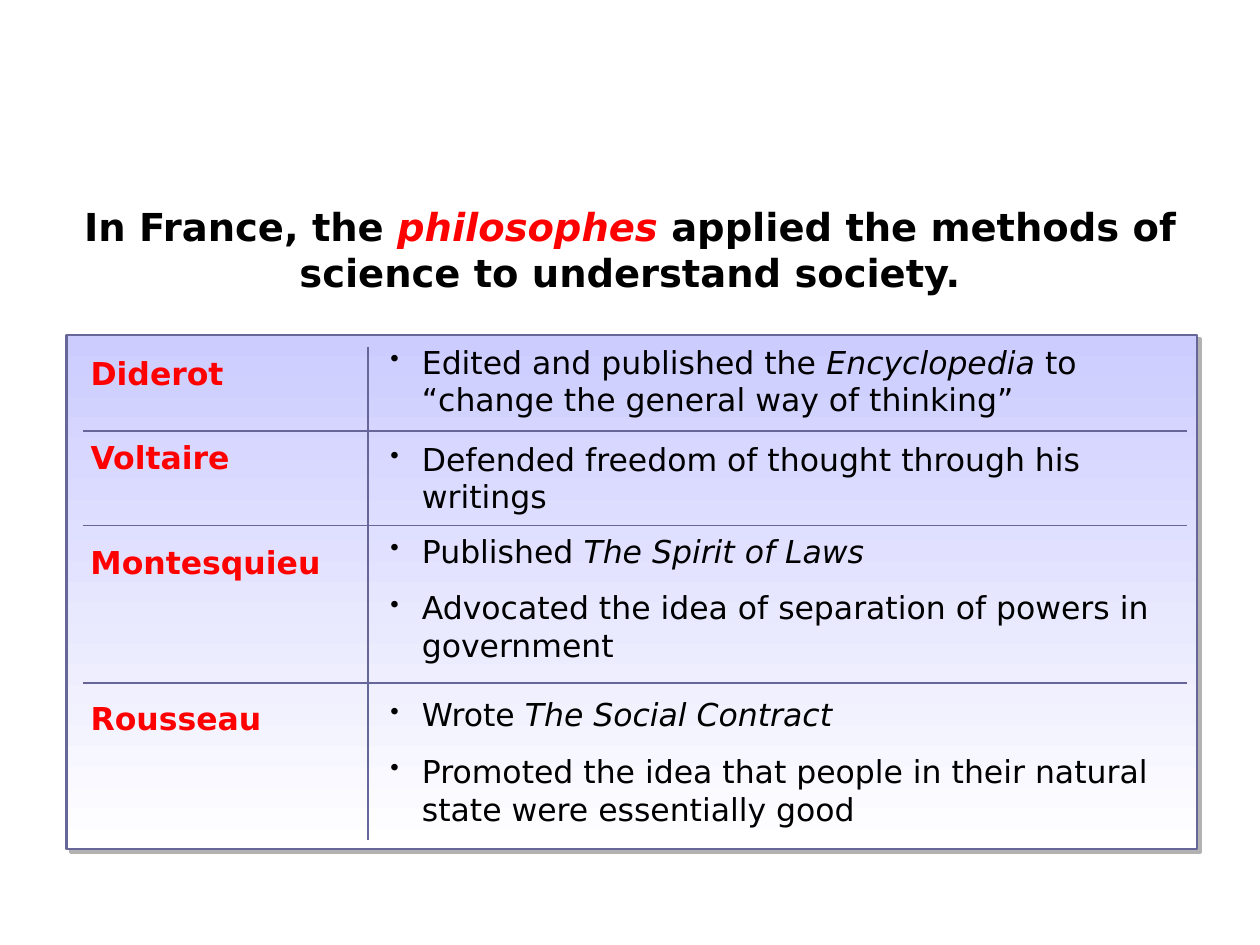
from lxml import etree
from pptx import Presentation
from pptx.dml.color import RGBColor
from pptx.enum.shapes import MSO_SHAPE
from pptx.enum.text import MSO_ANCHOR, MSO_AUTO_SIZE, PP_ALIGN
from pptx.oxml.ns import qn
from pptx.util import Inches, Pt

RECT = MSO_SHAPE.RECTANGLE
TOP = MSO_ANCHOR.TOP
CENTER = PP_ALIGN.CENTER
GROW = MSO_AUTO_SIZE.SHAPE_TO_FIT_TEXT
FIXED = MSO_AUTO_SIZE.NONE

HUES = {"text": "000000", "name": "FF0000", "line": "666699",
        "top": "CCCCFF", "base": "FFFFFF", "shade": "B2B2B2"}
FONT = "DejaVu Sans"
HEAD = {"name": FONT, "size": Pt(22), "bold": True}
NAME = {"name": FONT, "size": Pt(18), "bold": True}
BODY = {"name": FONT, "size": Pt(18), "bold": False}

COLS = [2.26, 6.5]
ROWS = [0.67, 0.75, 1.25, 1.25]
GRID = (0.66, 2.75, sum(COLS), sum(ROWS))

# Asterisks enclose the words in italics.
TITLE = ("In France, the *philosophes* applied the methods of "
         "science to understand society.")
# name, its top and width, top, width and height of its list, list items
THINKERS = [
    ("Diderot", 2.76, 1.92, 2.67, 6.08, 0.88,
     ["Edited and published the *Encyclopedia *to "
      "“change the general way of thinking”"]),
    ("Voltaire", 3.43, 1.92, 3.44, 6.42, 0.88,
     ["Defended freedom of thought through his writings"]),
    ("Montesquieu", 4.26, 2.17, 4.17, 6.58, 1.36,
     ["Published *The Spirit of Laws*",
      "Advocated the idea of separation of powers in government"]),
    ("Rousseau", 5.5, 1.92, 5.47, 6.25, 1.36,
     ["Wrote *The Social Contract*",
      "Promoted the idea that people in their natural state "
      "were essentially good"]),
]


def color(key):
    return RGBColor.from_string(HUES[key])


def add_node(up, tag, **attrs):
    node = etree.SubElement(up, qn(tag))
    for key, value in attrs.items():
        node.set(key, str(value))
    return node


def write(para, text, form, hue, stress):
    """Write text in runs; the words between asterisks are in italics."""
    for i, part in enumerate(text.split("*")):
        if not part:
            continue
        run = para.add_run()
        run.text = part
        for key, value in form.items():
            setattr(run.font, key, value)
        run.font.italic = i % 2 == 1
        run.font.color.rgb = color(stress if i % 2 else hue)


def add_title(slide):
    title = slide.shapes.title
    place = dict(left=0.5, top=1.56, width=9, height=1.05)
    for key, value in place.items():
        setattr(title, key, Inches(value))
    frame = title.text_frame
    frame.word_wrap, frame.vertical_anchor = True, TOP
    frame.auto_size = FIXED
    para = frame.paragraphs[0]
    para.alignment = CENTER
    write(para, TITLE, HEAD, "text", "name")


def add_panel(slide):
    panel = slide.shapes.add_shape(RECT, *map(Inches, (0.53, 2.66, 8.97, 4.08)))
    panel.fill.gradient()
    panel.fill.gradient_angle = 270
    for stop, key in zip(panel.fill.gradient_stops, ("top", "base")):
        stop.color.rgb = color(key)
    panel.line.color.rgb = color("line")
    panel.line.width = Pt(1.5)
    panel.shadow.inherit = False
    effects = panel._element.spPr.find(qn("a:effectLst"))
    shade = add_node(effects, "a:outerShdw", dist=Pt(2.8), dir=45 * 60000,
                     algn="ctr", rotWithShape=0)
    add_node(shade, "a:srgbClr", val=HUES["shade"])


def rule_cell(cell, sides):
    """Draw the given sides of a cell and clear the others."""
    props = cell._tc.get_or_add_tcPr()
    for side in "LRTB":
        edge = add_node(props, f"a:ln{side}", w=Pt(1))
        if side in sides:
            fill = add_node(edge, "a:solidFill")
            add_node(fill, "a:srgbClr", val=HUES["line"])
        else:
            add_node(edge, "a:noFill")
    cell.fill.background()


def add_grid(slide):
    table = slide.shapes.add_table(len(ROWS), len(COLS),
                                   *map(Inches, GRID)).table
    table.first_row = table.horz_banding = False
    for col, width in zip(table.columns, COLS):
        col.width = Inches(width)
    for r, height in enumerate(ROWS):
        table.rows[r].height = Inches(height)
        sides = ("T" if r else "") + ("B" if r < len(ROWS) - 1 else "")
        for c, inner in enumerate("RL"):
            rule_cell(table.cell(r, c), sides + inner)


def add_text(group, box, lines, form, hue, listed=False):
    frame = group.shapes.add_textbox(*map(Inches, box)).text_frame
    frame.word_wrap, frame.auto_size = True, GROW
    for i, line in enumerate(lines):
        para = frame.add_paragraph() if i else frame.paragraphs[0]
        para.space_after = Pt(10.8)
        if listed:
            props = para._p.get_or_add_pPr()
            props.set("marL", str(Inches(0.25)))
            props.set("indent", str(-Inches(0.25)))
            add_node(props, "a:buSzPct", val=80000)
            add_node(props, "a:buChar", char="•")
        write(para, line, form, hue, hue)


def main():
    deck = Presentation()
    deck.slide_width, deck.slide_height = Inches(10), Inches(7.5)
    slide = deck.slides.add_slide(deck.slide_layouts[5])
    add_title(slide)
    add_panel(slide)
    add_grid(slide)
    for name, name_top, name_wide, top, wide, high, items in THINKERS:
        group = slide.shapes.add_group_shape()
        add_text(group, (0.62, name_top, name_wide, 0.58), [name], NAME, "name")
        add_text(group, (3, top, wide, high), items, BODY, "text", True)
    deck.save("out.pptx")


if __name__ == "__main__":
    main()
